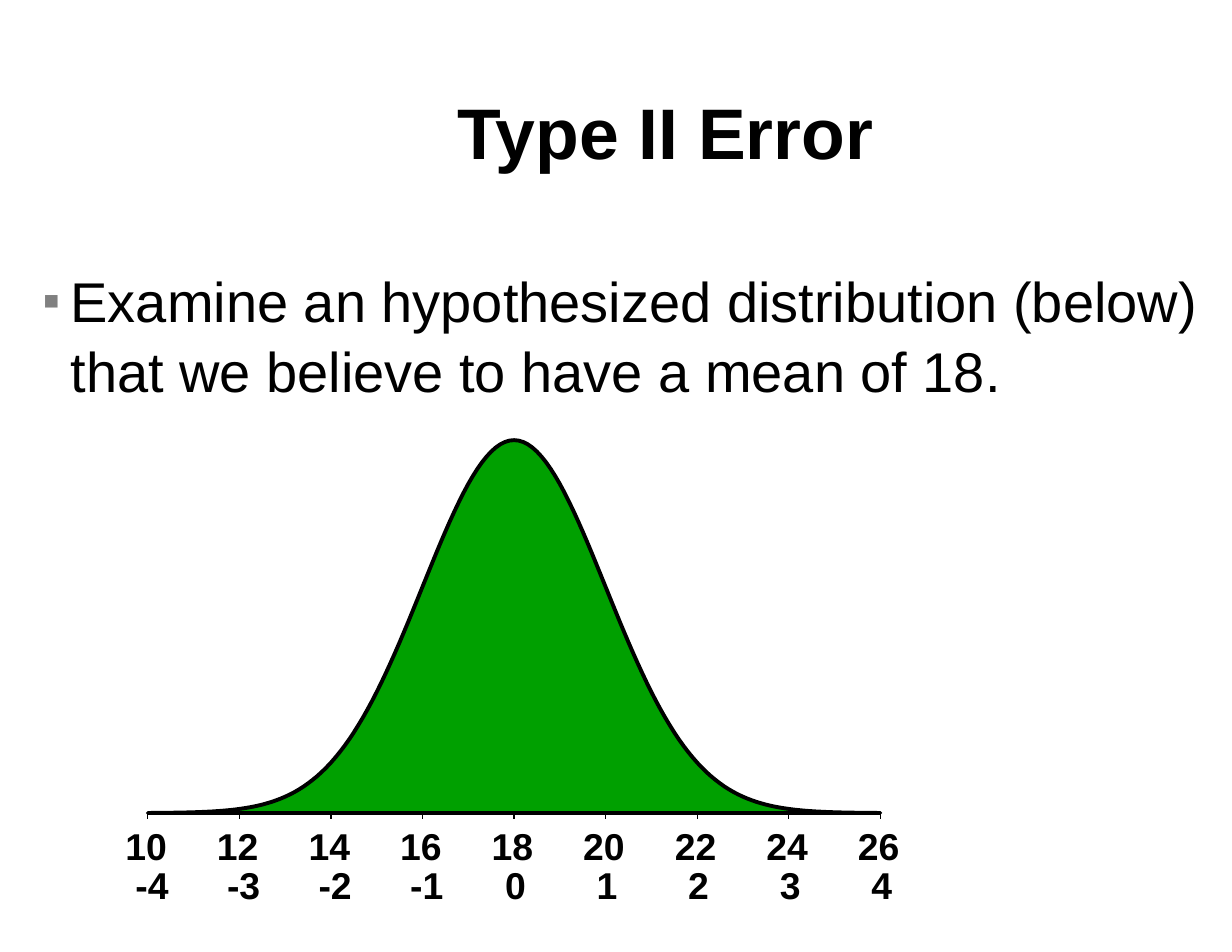
"""Build the Type II Error slide with a normal curve around a mean of 18."""
from dataclasses import dataclass
from math import exp

from lxml import etree
from pptx import Presentation, util as u
from pptx.dml.color import RGBColor
from pptx.enum import shapes, text
from pptx.oxml import ns


@dataclass(frozen=True)
class Theme:
    font: str = "Arial"
    ink: RGBColor = RGBColor(0, 0, 0)
    curve: RGBColor = RGBColor(0, 0xA0, 0)
    bullet: str = "808080"
    title_size: int = 46
    body_size: int = 36
    label_size: int = 24


theme = Theme()


def add_text(slide, words, left, top, width, height, size, bold=True):
    box = slide.shapes.add_textbox(*map(u.Inches, (left, top, width, height)))
    frame = box.text_frame
    frame.word_wrap = True
    frame.margin_left = frame.margin_right = frame.margin_top = frame.margin_bottom = 0
    paragraph = frame.paragraphs[0]
    paragraph.text = words
    paragraph.font.name = theme.font
    paragraph.font.size = u.Pt(size)
    paragraph.font.bold = bold
    paragraph.font.color.rgb = theme.ink
    return frame


def add_line(slide, *ends):
    line = slide.shapes.add_connector(shapes.MSO_CONNECTOR.STRAIGHT, *map(u.Inches, ends))
    line.line.color.rgb = theme.ink
    line.line.width = u.Pt(0.75)
    etree.SubElement(line._element.spPr, ns.qn("a:effectLst"))


presentation = Presentation()
presentation.slide_width = u.Inches(11)
presentation.slide_height = u.Inches(8.5)
slide = presentation.slides.add_slide(presentation.slide_layouts[6])

title = add_text(slide, "Type II Error", 0.48, 0.38, 10.92, 1.58, theme.title_size)
title.vertical_anchor = text.MSO_ANCHOR.MIDDLE
title.paragraphs[0].alignment = text.PP_ALIGN.CENTER

axis_left, axis_right, axis_y, peak = 1.32, 7.86, 7.26, 3.33
deviation = (axis_right - axis_left) / 8
steps = 160
points = []
for step in range(steps + 1):
    z = 8 * step / steps - 4
    x = axis_left + (z + 4) * deviation
    y = axis_y - peak * exp(-z * z / 2)
    points.append((u.Inches(x), u.Inches(y)))
builder = slide.shapes.build_freeform(*points[0])
builder.add_line_segments(points[1:], close=True)
curve = builder.convert_to_shape()
curve.shadow.inherit = False
curve.fill.solid()
curve.fill.fore_color.rgb = theme.curve
curve.line.color.rgb = theme.ink
curve.line.width = u.Pt(2.5)

add_line(slide, axis_right, axis_y, axis_left, axis_y)
for z in range(-4, 5):
    x = axis_left + (z + 4) * deviation
    add_line(slide, x, axis_y + 0.05, x, axis_y)
    add_text(slide, str(18 + 2 * z), x - 0.2, 7.35, 0.45, 0.4, theme.label_size)
    indent, width = (0.11, 0.36) if z < 0 else (0.08, 0.22)
    add_text(slide, str(z), x - indent, 7.7, width, 0.4, theme.label_size)

body = add_text(
    slide,
    "Examine an hypothesized distribution (below) that we believe to have a mean of 18.",
    0.39, 2.36, 11.15, 1.84, theme.body_size, bold=False,
)
paragraph = body.paragraphs[0]
paragraph.line_spacing = 1.04
paragraph.space_before = u.Pt(2)
properties = paragraph._p.get_or_add_pPr()
properties.set("marL", str(u.Inches(0.24)))
properties.set("indent", str(-u.Inches(0.24)))
bullet_color = etree.Element(ns.qn("a:buClr"))
etree.SubElement(bullet_color, ns.qn("a:srgbClr"), val=theme.bullet)
bullet_size = etree.Element(ns.qn("a:buSzPct"), val="46000")
bullet_font = etree.Element(ns.qn("a:buFont"), typeface=theme.font)
bullet = etree.Element(ns.qn("a:buChar"), char="■")
defaults = properties.find(ns.qn("a:defRPr"))
for element in (bullet_color, bullet_size, bullet_font, bullet):
    defaults.addprevious(element)

presentation.save("out.pptx")
